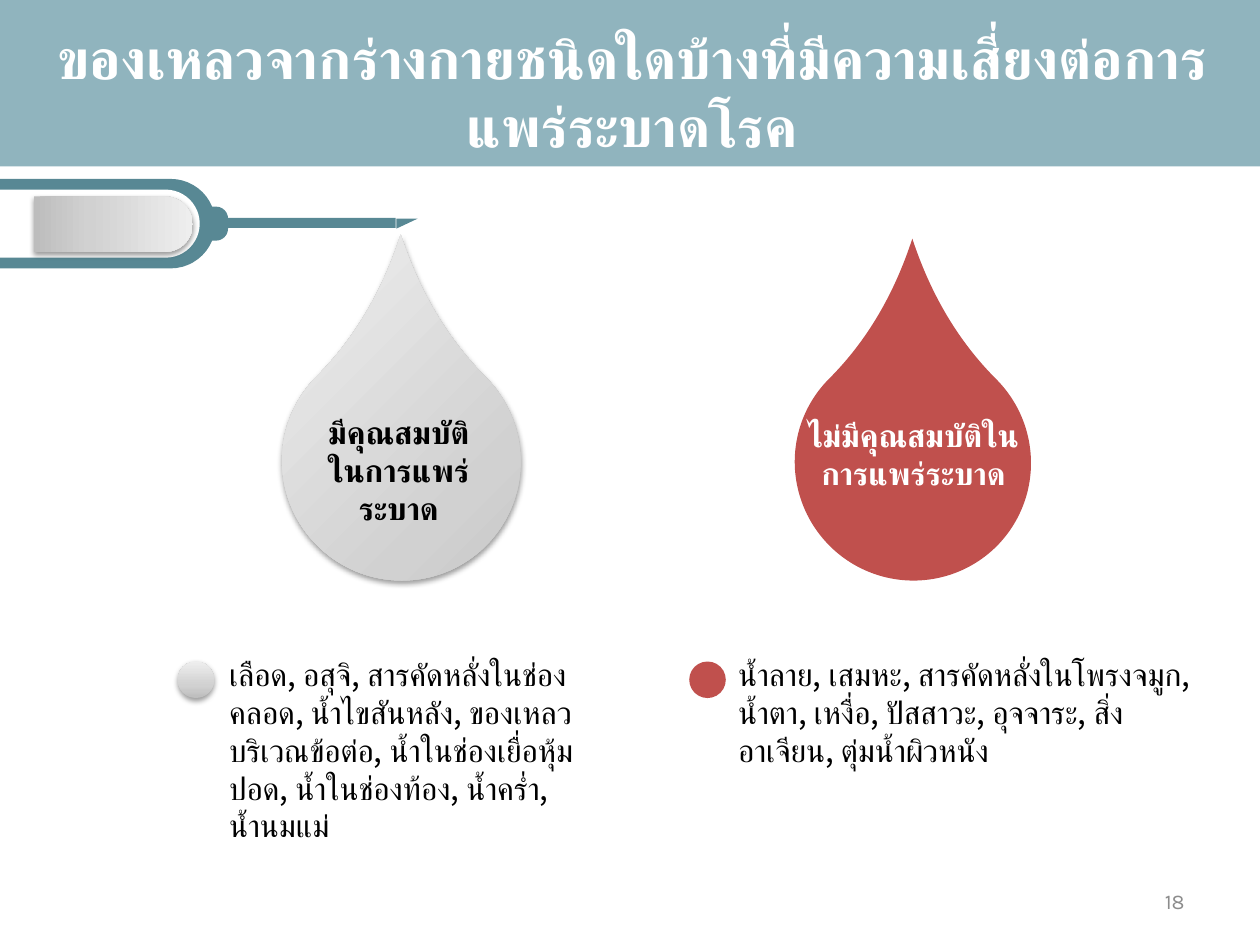
from typing import NamedTuple, Optional

from lxml.etree import SubElement
from pptx import Presentation
from pptx.dml.color import RGBColor
from pptx.enum.shapes import MSO_SHAPE
from pptx.enum.text import MSO_ANCHOR, PP_ALIGN
from pptx.oxml import parse_xml
from pptx.oxml.ns import nsdecls, qn
from pptx.util import Inches, Pt

# The slide is a grid of 100 columns by 75 rows of square cells.
COLUMNS, ROWS = 100, 75
CELL = Inches(0.1)

BAND = RGBColor(0x90, 0xB4, 0xBE)
TEAL = RGBColor(0x58, 0x88, 0x94)
RED = RGBColor(0xC0, 0x50, 0x4D)
WHITE = RGBColor(0xFF, 0xFF, 0xFF)
BLACK = RGBColor(0, 0, 0)
GREY = RGBColor(0x8C, 0x8C, 0x8C)
SILVER_STOPS = (
    (0, RGBColor(0xBD, 0xBD, 0xBD)),
    (35, RGBColor(0xD1, 0xD1, 0xD1)),
    (100, RGBColor(0xEE, 0xEE, 0xEE)),
)
THAI_FONT = "Noto Sans CJK SC"
NUMBER_FONT = "Karla"


class Box(NamedTuple):
    column: float
    row: float
    columns: float
    rows: float

    def lengths(self) -> list[int]:
        return [round(cells * CELL) for cells in self]


class Part(NamedTuple):
    """A preset shape; a colour of None stands for shaded silver."""
    preset: MSO_SHAPE
    box: Box
    color: Optional[RGBColor]
    rotation: float = 0
    adjustments: tuple[float, ...] = ()


class Label(NamedTuple):
    text: str
    box: Box
    size: int
    color: RGBColor
    bold: bool = False
    align: PP_ALIGN = PP_ALIGN.LEFT
    anchor: MSO_ANCHOR = MSO_ANCHOR.TOP
    font: str = THAI_FONT


class Fluid(NamedTuple):
    """One column: drop with its heading, bullet dot and list."""
    drop: Box
    dot: Box
    color: Optional[RGBColor]
    heading: Label
    examples: Label


ROUND_END = (0.5, 0)
SYRINGE = (
    Part(MSO_SHAPE.ROUND_2_SAME_RECTANGLE, Box(5, 9.2, 7.1, 17.1), TEAL, 90, ROUND_END),
    Part(MSO_SHAPE.ROUND_2_SAME_RECTANGLE, Box(5.2, 9.8, 5.4, 15.9), WHITE, 90, ROUND_END),
    Part(MSO_SHAPE.ROUND_2_SAME_RECTANGLE, Box(15.8, 16.8, 2.7, 1.9), TEAL, 90, ROUND_END),
    Part(MSO_SHAPE.RECTANGLE, Box(18.1, 17.3, 13.3, 0.8), TEAL),
    Part(MSO_SHAPE.RIGHT_TRIANGLE, Box(31.9, 16.9, 0.8, 1.7), TEAL, 90),
    Part(MSO_SHAPE.ROUND_2_SAME_RECTANGLE, Box(6.8, 11.5, 4.4, 12.6), None, 90, ROUND_END),
)

FLUIDS = (
    Fluid(
        Box(22.4, 27.1, 18.9, 19), Box(14.1, 52.5, 2.9, 2.9), None,
        Label("มีคุณสมบัติในการแพร่ระบาด", Box(24.4, 32.3, 14.5, 10.1),
              18, BLACK, True, PP_ALIGN.CENTER),
        Label("เลือด, อสุจิ, สารคัดหลั่งในช่องคลอด, น้ำไขสันหลัง, ของเหลวบริเวณข้อต่อ, "
              "น้ำในช่องเยื่อหุ้มปอด, น้ำในช่องท้อง, น้ำคร่ำ, น้ำนมแม่",
              Box(17.2, 51.5, 31.8, 16.2), 18, BLACK),
    ),
    Fluid(
        Box(63.1, 27.3, 18.7, 18.8), Box(54.7, 52.5, 2.9, 2.9), RED,
        Label("ไม่มีคุณสมบัติในการแพร่ระบาด", Box(63.1, 32.5, 18.8, 10.1),
              18, WHITE, True, PP_ALIGN.CENTER),
        Label("น้ำลาย, เสมหะ, สารคัดหลั่งในโพรงจมูก, น้ำตา, เหงื่อ, ปัสสาวะ, "
              "อุจจาระ, สิ่งอาเจียน, ตุ่มน้ำผิวหนัง",
              Box(57.6, 51.5, 38.8, 10.1), 18, BLACK),
    ),
)

TITLE = Label("ของเหลวจากร่างกายชนิดใดบ้างที่มีความเสี่ยงต่อการแพร่ระบาดโรค",
              Box(0.4, 1.4, 99.6, 12.5), 32, WHITE, True, PP_ALIGN.CENTER)
PAGE_NUMBER = Label("18", Box(71.7, 69.5, 23.3, 4), 12, GREY, False,
                    PP_ALIGN.RIGHT, MSO_ANCHOR.MIDDLE, NUMBER_FONT)


def shade_silver(shape) -> None:
    """Give the shape the silver gradient and a soft shadow below it."""
    stops = "".join(
        f'<a:gs pos="{position * 1000}"><a:srgbClr val="{color}"/></a:gs>'
        for position, color in SILVER_STOPS
    )
    properties = shape._element.spPr
    shape.fill.gradient()
    properties.replace(properties.find(qn("a:gradFill")), parse_xml(
        f'<a:gradFill {nsdecls("a")} rotWithShape="1"><a:gsLst>{stops}</a:gsLst>'
        '<a:lin ang="16200000" scaled="1"/></a:gradFill>'))
    properties.find(qn("a:effectLst")).append(parse_xml(
        f'<a:outerShdw {nsdecls("a")} blurRad="{Pt(3.1)}" dist="{Pt(1.6)}" '
        'dir="5400000" rotWithShape="0"><a:srgbClr val="000000">'
        '<a:alpha val="38000"/></a:srgbClr></a:outerShdw>'))


def draw_part(shapes, part: Part) -> None:
    shape = shapes.add_shape(part.preset, *part.box.lengths())
    shape.rotation = part.rotation
    for index, value in enumerate(part.adjustments):
        shape.adjustments[index] = value
    shape.line.fill.background()
    shape.shadow.inherit = False
    if part.color is None:
        shade_silver(shape)
    else:
        shape.fill.solid()
        shape.fill.fore_color.rgb = part.color


def draw_label(shapes, label: Label) -> None:
    text_frame = shapes.add_textbox(*label.box.lengths()).text_frame
    text_frame.word_wrap = True
    text_frame.vertical_anchor = label.anchor
    text_frame.text = label.text
    paragraph = text_frame.paragraphs[0]
    paragraph.alignment = label.align
    font = paragraph.runs[0].font
    font.name = label.font
    font.size = Pt(label.size)
    font.bold = label.bold
    font.color.rgb = label.color
    # Thai letters take the complex-script font.
    for script in ("a:ea", "a:cs"):
        SubElement(font._element, qn(script)).set("typeface", label.font)


def main() -> None:
    presentation = Presentation()
    presentation.slide_width = COLUMNS * CELL
    presentation.slide_height = ROWS * CELL
    slide = presentation.slides.add_slide(presentation.slide_layouts[6])
    shapes = slide.shapes

    draw_part(shapes, Part(MSO_SHAPE.RECTANGLE, Box(0, 0, COLUMNS, 13.2), BAND))
    syringe = shapes.add_group_shape()
    for part in SYRINGE:
        draw_part(syringe.shapes, part)
    for fluid in FLUIDS:
        draw_part(shapes, Part(MSO_SHAPE.TEAR, fluid.drop, fluid.color, 315, (1.34,)))
        draw_part(shapes, Part(MSO_SHAPE.OVAL, fluid.dot, fluid.color))
        draw_label(shapes, fluid.heading)
        draw_label(shapes, fluid.examples)
    draw_label(shapes, TITLE)
    draw_label(shapes, PAGE_NUMBER)
    presentation.save("out.pptx")


if __name__ == "__main__":
    main()
